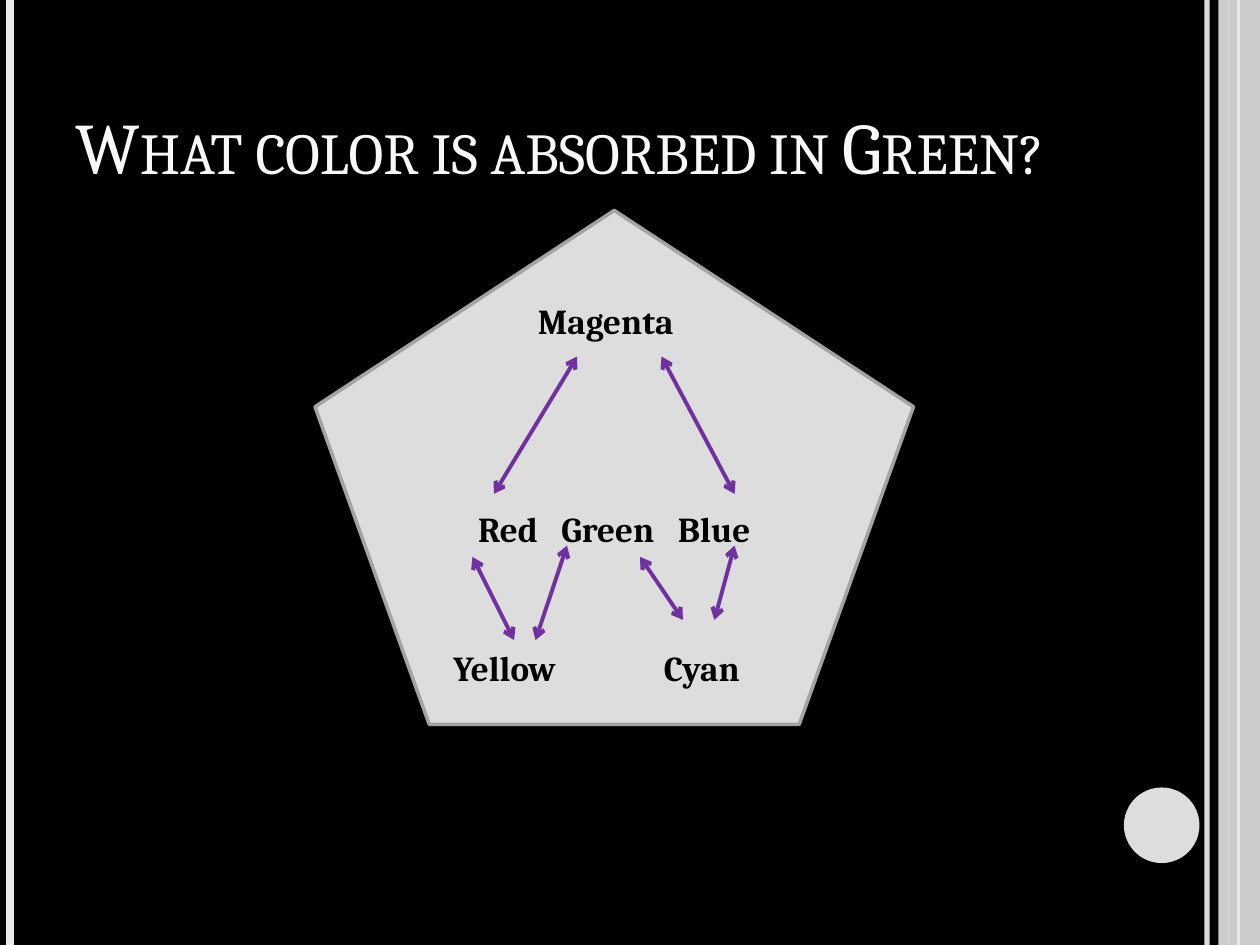
from pptx import Presentation
from pptx.dml.color import RGBColor
from pptx.enum.shapes import MSO_CONNECTOR, MSO_SHAPE
from pptx.enum.text import MSO_ANCHOR, MSO_AUTO_SIZE, PP_ALIGN
from pptx.oxml.ns import qn
from pptx.util import Inches, Pt
from lxml import etree

LINE = MSO_CONNECTOR.STRAIGHT
RECT, OVAL, PENT = MSO_SHAPE.RECTANGLE, MSO_SHAPE.OVAL, MSO_SHAPE.REGULAR_PENTAGON
LEFT, CENTER = PP_ALIGN.LEFT, PP_ALIGN.CENTER

WIDE, HIGH = 10, 7.5
FONT = "Cambria"
PALE, GRAY, EDGE, PURPLE = "EBEBEB", "DDDDDD", "A3A3A3", "7030A0"

TITLE = "What color is absorbed in Green?"
PRIMARY = ["Red", "Green", "Blue"]
MIXED = [("Magenta", 4.17, 2.33), ("Yellow", 3.5, 5.08), ("Cyan", 5.17, 5.08)]
# x, width in points, colour, opacity in percent
BACK_BARS = [(9.58, 3, PALE, 93), (0.08, 4.5, PALE, 100), (9.83, 1.5, GRAY, 100)]
FRONT_BARS = [(9.75, 0.75, GRAY, 100)]
ARROWS = [
    ((3.92, 3.92), (4.58, 2.83)),  # Red - Magenta
    ((5.25, 2.83), (5.83, 3.92)),  # Magenta - Blue
    ((3.75, 4.42), (4.08, 5.08)),  # Red - Yellow
    ((4.5, 4.33), (4.25, 5.08)),   # Green - Yellow
    ((5.08, 4.42), (5.42, 4.92)),  # Green - Cyan
    ((5.83, 4.33), (5.67, 4.92)),  # Blue - Cyan
]


def paint(target, color, alpha=100):
    """Give a fill format a solid colour and an opacity in percent."""
    target.solid()
    target.fore_color.rgb = RGBColor.from_string(color)
    if alpha < 100:
        node = target._xPr.find(qn("a:solidFill"))[0]
        etree.SubElement(node, qn("a:alpha")).set("val", str(alpha * 1000))


def style(run, size, color, bold=False):
    font = run.font
    font.name, font.size, font.bold = FONT, Pt(size), bold
    font.color.rgb = RGBColor.from_string(color)


def add_line(slide, start, end, color, width, alpha=100):
    line = slide.shapes.add_connector(LINE, *map(Inches, start + end))
    paint(line.line.fill, color, alpha)
    line.line.width = Pt(width)
    etree.SubElement(line._element.spPr, qn("a:effectLst"))
    return line


def add_bars(slide, bars):
    for x, width, color, alpha in bars:
        add_line(slide, (x, 0), (x, HIGH), color, width, alpha)


def add_arrow(slide, start, end):
    line = add_line(slide, start, end, PURPLE, 2.25)
    for tag in ("a:headEnd", "a:tailEnd"):
        etree.SubElement(line.line._ln, qn(tag)).set("type", "arrow")


def add_shape(slide, kind, box, color, alpha=100):
    shape = slide.shapes.add_shape(kind, *map(Inches, box))
    shape.shadow.inherit = False
    paint(shape.fill, color, alpha)
    shape.line.fill.background()
    return shape


def add_title(slide):
    title = slide.shapes.title
    title.left, title.top, title.width, title.height = map(Inches, (0.5, 0.3, 8.67, 1.25))
    frame = title.text_frame
    frame.text = TITLE
    frame.word_wrap, frame.auto_size = True, MSO_AUTO_SIZE.NONE
    frame.vertical_anchor = MSO_ANCHOR.BOTTOM
    para = frame.paragraphs[0]
    para.alignment = LEFT
    style(para.runs[0], 41.4, "F8F8F8")
    para.runs[0]._r.get_or_add_rPr().set("cap", "small")


def add_pentagon(slide):
    """Draw the pentagon with the primaries, set apart by widened spaces."""
    shape = add_shape(slide, PENT, (2.5, 1.67, 4.75, 4.08), GRAY)
    paint(shape.line.fill, EDGE)
    shape.line.width = Pt(2)
    shape.text_frame.vertical_anchor = MSO_ANCHOR.MIDDLE
    para = shape.text_frame.paragraphs[0]
    para.alignment = CENTER
    for part in " | ".join(PRIMARY).replace(" | ", "| |").split("|"):
        run = para.add_run()
        run.text = part
        style(run, 20, "000000", True)
        if part == " ":
            run._r.get_or_add_rPr().set("spc", "900")


def add_label(slide, text, x, y):
    box = slide.shapes.add_textbox(*map(Inches, (x, y, 1.57, 0.44)))
    frame = box.text_frame
    frame.text = text
    frame.word_wrap = True
    frame.auto_size = MSO_AUTO_SIZE.SHAPE_TO_FIT_TEXT
    style(frame.paragraphs[0].runs[0], 20, "000000", True)


def main():
    deck = Presentation()
    deck.slide_width, deck.slide_height = Inches(WIDE), Inches(HIGH)
    slide = deck.slides.add_slide(deck.slide_layouts[5])
    paint(slide.background.fill, "000000")
    add_bars(slide, BACK_BARS)
    add_shape(slide, RECT, (9.67, 0, 0.33, HIGH), PALE, 87)
    add_bars(slide, FRONT_BARS)
    add_shape(slide, OVAL, (8.92, 6.25, 0.6, 0.6), GRAY)
    add_title(slide)
    add_pentagon(slide)
    for label in MIXED:
        add_label(slide, *label)
    for start, end in ARROWS:
        add_arrow(slide, start, end)
    deck.save("out.pptx")


if __name__ == "__main__":
    main()
